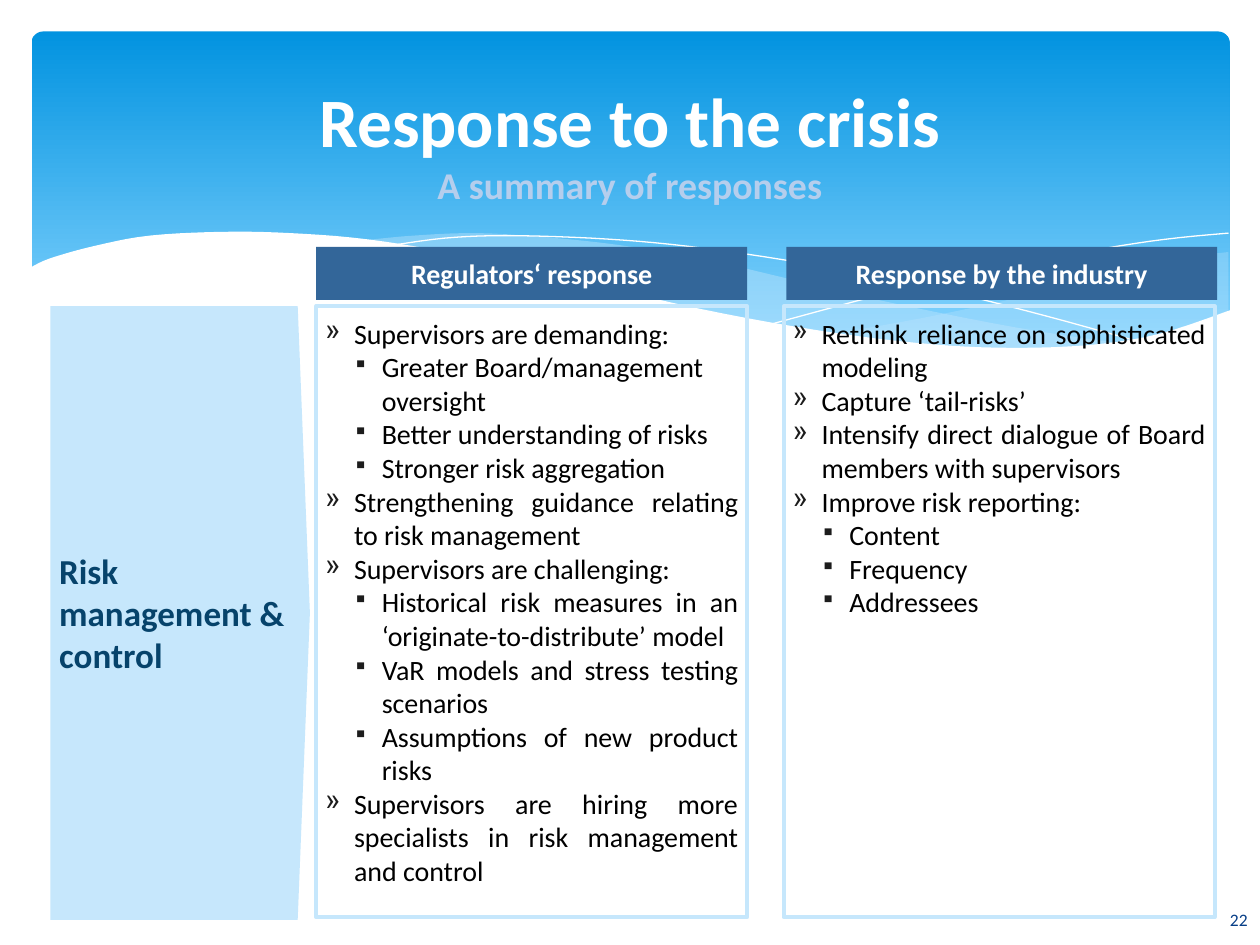
import pptx
import pptx.dml.color
import pptx.enum.shapes
import pptx.enum.text
import pptx.oxml
import pptx.oxml.ns
import pptx.util

Inches = pptx.util.Inches
Pt = pptx.util.Pt
ALIGN = pptx.enum.text.PP_ALIGN
ANCHOR = pptx.enum.text.MSO_ANCHOR
SHAPE = pptx.enum.shapes.MSO_SHAPE

FONT = "Calibri"
COLORS = {
    "band_top": "0293E0", "band_bottom": "83D3FE", "pale": "C6E7FC",
    "white": "FFFFFF", "subtitle": "B5CEED", "topic": "06436B",
    "header": "336699", "body": "000000", "bullet": "1C1C1C", "number": "073E87",
}
BULLETS = [("»", 100), ("▪", 75)]

RIGHT_WAVE = [
    [(9.5, 1.75), (8.96, 1.82), (8.36, 1.98), (7.8, 2.12), (7.04, 2.28), (6.36, 2.4)],
    [(6.36, 2.4), (6.94, 2.47), (7.56, 2.52), (8.19, 2.52), (8.72, 2.45),
     (9.17, 2.34), (9.5, 2.22)],
]
LONG_WAVE = [
    [(8.68, 2.48), (7.82, 2.35), (6.81, 2.15), (6.04, 1.97), (5.44, 1.83),
     (4.77, 1.71), (4.17, 1.64), (3.55, 1.6), (3.03, 1.62), (2.61, 1.66)],
    [(2.61, 1.66), (3.37, 1.78), (4.24, 1.97), (5.05, 2.15), (5.93, 2.33),
     (6.7, 2.45), (7.36, 2.52), (8.03, 2.53), (8.68, 2.48)],
]
FALLING_LINE = [[(2.84, 1.7), (3.28, 1.64), (3.76, 1.62), (4.44, 1.64), (5.08, 1.69),
                 (5.83, 1.79), (6.7, 1.94), (7.35, 2.08), (8.06, 2.26), (8.82, 2.47)]]
RISING_LINE = [[(5.88, 2.32), (6.7, 2.1), (7.51, 1.91), (8.41, 1.74),
                (8.99, 1.65), (9.5, 1.6)]]
WHITE_WAVE = [
    [(9.52, 2.21), (8.95, 2.4), (8.38, 2.49), (7.68, 2.51), (7.01, 2.47),
     (6.23, 2.37), (5.3, 2.2), (4.22, 1.95), (3.4, 1.77), (2.67, 1.65),
     (2.05, 1.6), (1.52, 1.59), (0.94, 1.62), (0.51, 1.7), (0.15, 1.8), (-0.02, 1.88)],
    [(-0.02, 3.04), (9.52, 3.04)],
]

REGULATORS = [
    (0, "Supervisors are demanding:"),
    (1, "Greater Board/management oversight", ALIGN.LEFT),
    (1, "Better understanding of risks"),
    (1, "Stronger risk aggregation"),
    (0, "Strengthening guidance relating to risk management"),
    (0, "Supervisors are challenging:"),
    (1, "Historical risk measures in an ‘originate-to-distribute’ model"),
    (1, "VaR models and stress testing scenarios"),
    (1, "Assumptions of new product risks"),
    (0, "Supervisors are hiring more specialists in risk management and control"),
]
INDUSTRY = [
    (0, "Rethink reliance on sophisticated modeling"),
    (0, "Capture ‘tail-risks’"),
    (0, "Intensify direct dialogue of Board members with supervisors"),
    (0, "Improve risk reporting:"),
    (1, "Content"),
    (1, "Frequency"),
    (1, "Addressees"),
]


def rgb(name):
    return pptx.dml.color.RGBColor.from_string(COLORS[name])


def set_font(font, size, color, bold=False):
    font.name, font.size, font.bold = FONT, Pt(size), bold
    font.color.rgb = rgb(color)


def paint(shape, fill=None, line=None, width=0, alpha=None):
    shape.shadow.inherit = False
    if fill:
        shape.fill.solid()
        shape.fill.fore_color.rgb = rgb(fill)
        if alpha:
            color = shape.fill._xPr.find(".//" + pptx.oxml.ns.qn("a:srgbClr"))
            pptx.oxml.ns.qn("a:alpha")
            color.append(pptx.oxml.parse_xml(
                f'<a:alpha {pptx.oxml.ns.nsdecls("a")} val="{alpha * 1000}"/>'))
    else:
        shape.fill.background()
    if line:
        shape.line.color.rgb = rgb(line)
        shape.line.width = Pt(width)
    else:
        shape.line.fill.background()


def add_panel(slide, kind, box, **style):
    panel = slide.shapes.add_shape(kind, *(Inches(length) for length in box))
    paint(panel, **style)
    return panel


def set_frame(frame, anchor, side, vertical):
    frame.word_wrap = True
    frame.vertical_anchor = anchor
    frame.margin_left = frame.margin_right = Inches(side)
    frame.margin_top = frame.margin_bottom = Inches(vertical)


def smooth(points, steps=5):
    padded = [points[0], *points, points[-1]]
    curve = [points[0]]
    for a, b, c, d in zip(padded, padded[1:], padded[2:], padded[3:]):
        for step in range(1, steps + 1):
            t = step / steps
            curve.append(tuple(
                q + t * (r - p) / 2 + t**2 * (2 * p - 5 * q + 4 * r - s) / 2
                + t**3 * (3 * q - p - 3 * r + s) / 2
                for p, q, r, s in zip(a, b, c, d)))
    return curve


def add_wave(slide, left, top, curves, closed=True, **style):
    outline = [(Inches(left + x), Inches(top + y))
               for curve in curves for x, y in smooth(curve)]
    builder = slide.shapes.build_freeform(*outline[0])
    builder.add_line_segments(outline[1:], close=closed)
    paint(builder.convert_to_shape(), **style)


def add_banner(slide, left, top, width, height):
    band = add_panel(slide, SHAPE.ROUNDED_RECTANGLE, (left, top, width, height))
    band.adjustments[0] = 0.034
    band.fill.gradient()
    band.fill.gradient_angle = 270
    stops = zip(band.fill.gradient_stops, (0, 0.9), ("band_top", "band_bottom"))
    for stop, position, color in stops:
        stop.position = position
        stop.color.rgb = rgb(color)
    add_wave(slide, left, top, RIGHT_WAVE, fill="pale", alpha=29)
    add_wave(slide, left, top, LONG_WAVE, fill="pale", alpha=40)
    for curves in (FALLING_LINE, RISING_LINE):
        add_wave(slide, left, top, curves, closed=False, line="white")
    add_wave(slide, left, top, WHITE_WAVE, fill="white")


def add_title(slide, left, top, width, height):
    title = slide.shapes.title
    title.left, title.top = Inches(left), Inches(top)
    title.width, title.height = Inches(width), Inches(height)
    slide.shapes._spTree.append(title._element)
    set_frame(title.text_frame, ANCHOR.BOTTOM, 0.1, 0)
    lines = [("Response to the crisis", 39.6, "white"),
             ("A summary of responses", 21.6, "subtitle")]
    title.text_frame.text = "\n".join(text for text, _, _ in lines)
    for paragraph, (_, size, color) in zip(title.text_frame.paragraphs, lines):
        paragraph.alignment = ALIGN.CENTER
        paragraph.space_before = Pt(0)
        set_font(paragraph.font, size, color, bold=True)


def add_label(panel, text, align, size, color, bold=False):
    paragraph = panel.text_frame.paragraphs[0]
    paragraph.text = text
    paragraph.alignment = align
    set_font(paragraph.font, size, color, bold)


def add_topic(slide, *box):
    topic = add_panel(slide, SHAPE.PENTAGON, box, fill="pale")
    topic.adjustments[0] = 0.047
    set_frame(topic.text_frame, ANCHOR.MIDDLE, 0.07, 0.07)
    add_label(topic, "Risk management & control", ALIGN.LEFT, 20, "topic", True)


def add_header(slide, text, *box):
    header = add_panel(slide, SHAPE.RECTANGLE, box, fill="header")
    set_frame(header.text_frame, ANCHOR.MIDDLE, 0.07, 0)
    add_label(header, text, ALIGN.CENTER, 16, "white", True)


def set_bullet(paragraph, level):
    char, size = BULLETS[level]
    properties = paragraph._p.get_or_add_pPr()
    properties.set("marL", str(Inches((0.23, 0.45)[level])))
    properties.set("indent", str(-Inches(0.23)))
    for tag in (f'buClr {{}}><a:srgbClr val="{COLORS["bullet"]}"/></a:buClr',
                f'buSzPct {{}} val="{size * 1000}"/',
                f'buChar {{}} char="{char}"/'):
        xml = f"<a:{tag}>".format(pptx.oxml.ns.nsdecls("a"))
        properties.append(pptx.oxml.parse_xml(xml))


def add_responses(slide, items, *box):
    panel = add_panel(slide, SHAPE.RECTANGLE, box, line="pale", width=2.25)
    frame = panel.text_frame
    set_frame(frame, ANCHOR.TOP, 0.07, 0.08)
    frame.text = "\n".join(item[1] for item in items)
    for paragraph, (level, _, *align) in zip(frame.paragraphs, items):
        paragraph.level = level
        paragraph.alignment = align[0] if align else ALIGN.JUSTIFY
        set_bullet(paragraph, level)
        set_font(paragraph.font, 16, "body")


def add_page_number(slide, *box):
    number = slide.shapes.add_textbox(*(Inches(length) for length in box))
    set_frame(number.text_frame, ANCHOR.MIDDLE, 0.1, 0.05)
    add_label(number, "22", ALIGN.RIGHT, 10, "number")


def main():
    deck = pptx.Presentation()
    deck.slide_width, deck.slide_height = Inches(10), Inches(7.5)
    slide = deck.slides.add_slide(deck.slide_layouts[5])
    add_banner(slide, 0.25, 0.25, 9.51, 2.7)
    add_title(slide, 0.5, 0.27, 9, 1.37)
    add_topic(slide, 0.4, 2.43, 2.06, 4.87)
    add_responses(slide, REGULATORS, 2.51, 2.43, 3.42, 4.85)
    add_responses(slide, INDUSTRY, 6.22, 2.43, 3.42, 4.85)
    add_header(slide, "Regulators‘ response", 2.51, 1.96, 3.42, 0.42)
    add_header(slide, "Response by the industry", 6.24, 1.96, 3.42, 0.42)
    add_page_number(slide, 8.73, 7.1, 1.27, 0.4)
    deck.save("out.pptx")


if __name__ == "__main__":
    main()
